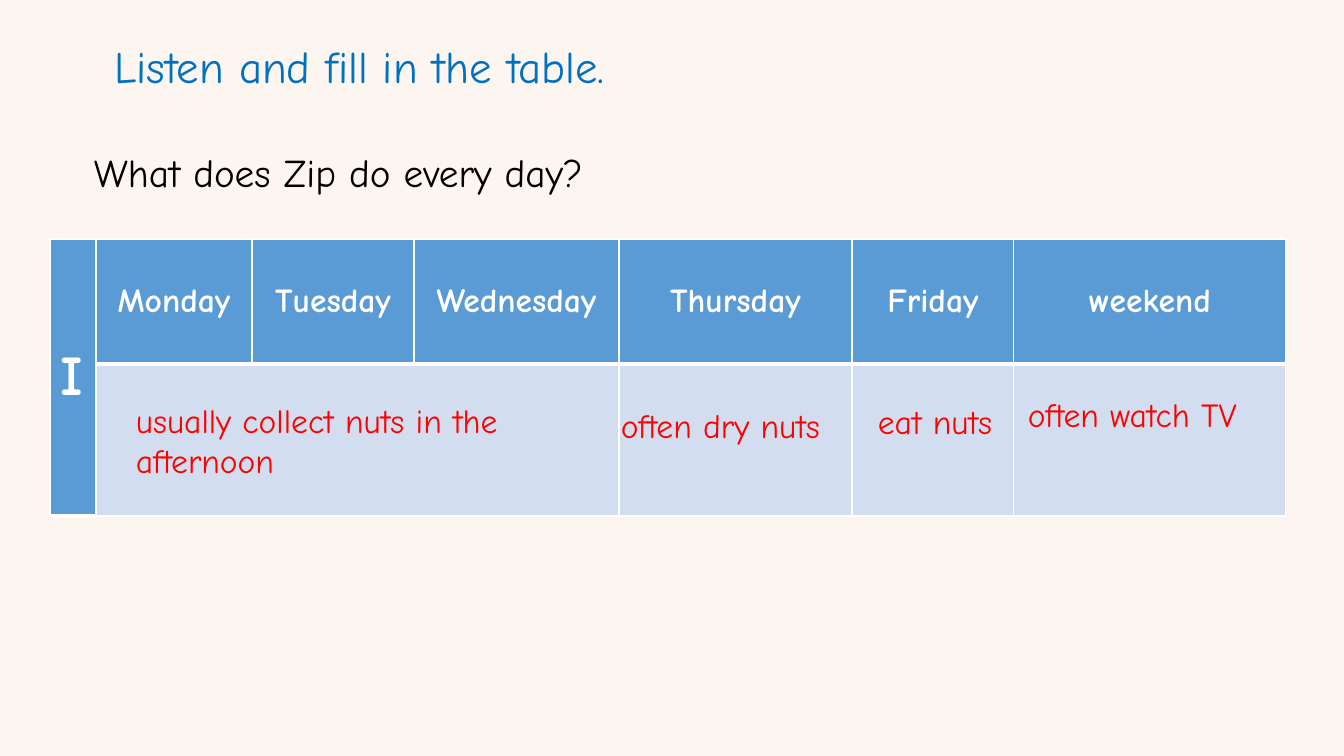
from dataclasses import dataclass

from lxml.etree import SubElement
from pptx import Presentation
from pptx.dml.color import RGBColor
from pptx.enum.text import MSO_ANCHOR, MSO_AUTO_SIZE, PP_ALIGN
from pptx.oxml.ns import qn
from pptx.util import Emu, Pt

PX_PER_INCH = 100.8
FONT_NAME = "Comic Neue"
CREAM = RGBColor(0xFD, 0xF5, 0xEF)
WHITE = RGBColor(0xFF, 0xFF, 0xFF)
BLACK = RGBColor(0x00, 0x00, 0x00)
TITLE_BLUE = RGBColor(0x00, 0x70, 0xC0)
HEADER_BLUE = RGBColor(0x5B, 0x9B, 0xD5)
BODY_BLUE = RGBColor(0xD2, 0xDE, 0xEF)
ANSWER_RED = RGBColor(0xFF, 0x00, 0x00)

HEADINGS = ["I", "Monday", "Tuesday", "Wednesday", "Thursday", "Friday", "weekend"]
COLUMN_WIDTHS = [46, 156, 162, 205, 233, 162, 272]
ROW_HEIGHTS = [125, 152]


@dataclass
class Label:
    text: str
    left: int
    top: int
    width: int
    height: int
    color: RGBColor = ANSWER_RED
    size: int = 24
    wrap: bool = True
    line_spacing: float = 1.0


TITLE = Label("Listen and fill in the table.", 104, 34, 989, 64, TITLE_BLUE, 32)
LABELS = [
    Label("What does Zip do every day?", 84, 120, 559, 74, BLACK, 28, False, 1.5),
    Label("usually collect nuts in the afternoon", 126, 395, 479, 92),
    Label("often dry nuts", 611, 400, 255, 50),
    Label("eat nuts", 868, 396, 150, 50, wrap=False),
    Label("often watch TV", 1018, 389, 267, 50, wrap=False),
]


def px(length: int) -> Emu:
    return Emu(round(length * 914400 / PX_PER_INCH))


def set_attributes(target, values: dict) -> None:
    for name, value in values.items():
        setattr(target, name, value)


def format_font(font, size: int, color: RGBColor, bold: bool = False) -> None:
    set_attributes(font, {"name": FONT_NAME, "size": Pt(size), "bold": bold})
    font.color.rgb = color


def fill_label(shape, label: Label) -> None:
    set_attributes(shape, {"left": px(label.left), "top": px(label.top),
                           "width": px(label.width), "height": px(label.height)})
    frame = shape.text_frame
    frame.text = label.text
    set_attributes(frame, {"word_wrap": label.wrap, "vertical_anchor": MSO_ANCHOR.TOP,
                           "auto_size": MSO_AUTO_SIZE.SHAPE_TO_FIT_TEXT})
    paragraph = frame.paragraphs[0]
    set_attributes(paragraph, {"alignment": PP_ALIGN.LEFT,
                               "line_spacing": label.line_spacing})
    format_font(paragraph.font, label.size, label.color)


def set_borders(cell, bottom_points: int) -> None:
    properties = cell._tc.get_or_add_tcPr()
    widths = {"a:lnL": 1, "a:lnR": 1, "a:lnT": 1, "a:lnB": bottom_points}
    for tag, points in widths.items():
        line = SubElement(properties, qn(tag), w=str(Pt(points)))
        fill = SubElement(line, qn("a:solidFill"))
        SubElement(fill, qn("a:srgbClr"), val=str(WHITE))


def add_week_table(slide) -> None:
    frame = slide.shapes.add_table(
        len(ROW_HEIGHTS), len(COLUMN_WIDTHS), px(50), px(239),
        px(sum(COLUMN_WIDTHS)), px(sum(ROW_HEIGHTS)))
    table = frame.table
    set_attributes(table, {"first_row": False, "horz_banding": False})
    for column, width in zip(table.columns, COLUMN_WIDTHS):
        column.width = px(width)
    for row, height in zip(table.rows, ROW_HEIGHTS):
        row.height = px(height)

    # Borders and fills
    for row_index, row in enumerate(table.rows):
        for column_index, cell in enumerate(row.cells):
            is_header = row_index == 0 or column_index == 0
            set_borders(cell, 3 if is_header else 1)
            cell.fill.solid()
            cell.fill.fore_color.rgb = HEADER_BLUE if is_header else BODY_BLUE

    # Subject column and shared Monday to Wednesday answer
    table.cell(0, 0).merge(table.cell(1, 0))
    table.cell(1, 1).merge(table.cell(1, 3))

    # Headings
    for column_index, heading in enumerate(HEADINGS):
        cell = table.cell(0, column_index)
        cell.text = heading
        cell.vertical_anchor = MSO_ANCHOR.MIDDLE
        paragraph = cell.text_frame.paragraphs[0]
        is_subject = column_index == 0
        paragraph.alignment = PP_ALIGN.LEFT if is_subject else PP_ALIGN.CENTER
        format_font(paragraph.font, 40 if is_subject else 24, WHITE, bold=True)


def main() -> None:
    presentation = Presentation()
    set_attributes(presentation, {"slide_width": px(1344), "slide_height": px(756)})
    slide = presentation.slides.add_slide(presentation.slide_layouts[5])
    slide.background.fill.solid()
    slide.background.fill.fore_color.rgb = CREAM

    # Title, table, then the question and answers on top
    fill_label(slide.shapes.title, TITLE)
    add_week_table(slide)
    for label in LABELS:
        fill_label(slide.shapes.add_textbox(0, 0, 0, 0), label)

    presentation.save("out.pptx")


if __name__ == "__main__":
    main()
